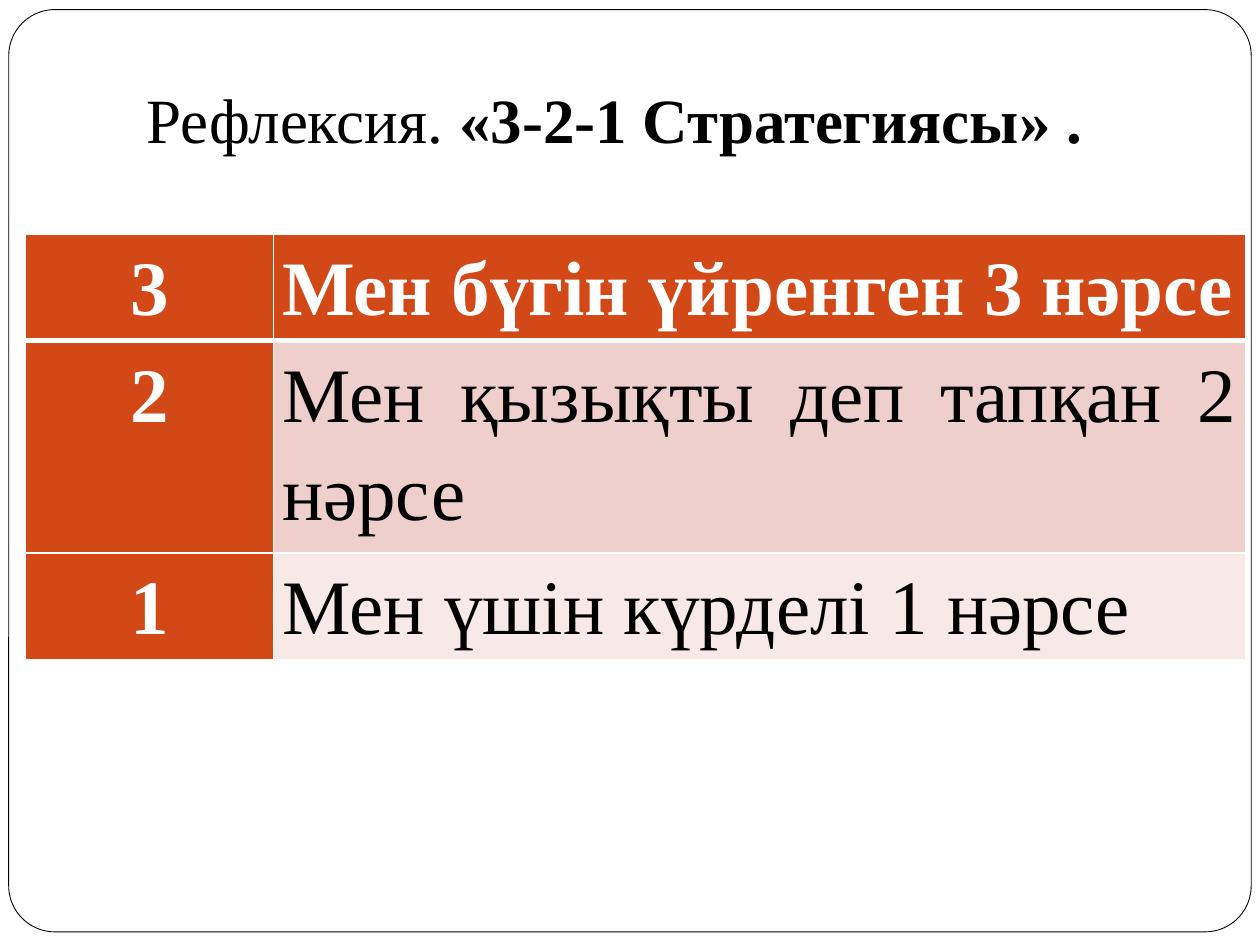
from dataclasses import dataclass

from lxml.etree import SubElement
from pptx import Presentation
from pptx.dml.color import RGBColor
from pptx.enum.shapes import MSO_SHAPE
from pptx.enum.text import MSO_ANCHOR, MSO_AUTO_SIZE, PP_ALIGN
from pptx.oxml.ns import qn
from pptx.util import Pt


@dataclass(frozen=True)
class Theme:
    font: str = "Times New Roman"
    title_size: int = 36
    table_size: int = 44
    black: str = "000000"
    white: str = "FFFFFF"
    accent: str = "D34817"
    bands: tuple = ("EFCFCC", "F7E9E8")


THEME = Theme()
STRATEGY = [
    ("3", "Мен бүгін үйренген 3 нәрсе"),
    ("2", "Мен қызықты деп тапқан 2 нәрсе"),
    ("1", "Мен үшін күрделі 1 нәрсе"),
]
COLUMN_WIDTHS = (141.8, 555.8)
ROW_HEIGHTS = (55.5, 112, 56)


def color(value):
    return RGBColor.from_string(value)


def format_span(span, size, ink, bold):
    span.font.name = THEME.font
    span.font.size = Pt(size)
    span.font.color.rgb = color(ink)
    span.font.bold = bold


def add_frame(page):
    """Rounded page border, placed behind everything else."""
    frame = page.shapes.add_shape(
        MSO_SHAPE.ROUNDED_RECTANGLE, Pt(5), Pt(5.5), Pt(710), Pt(527))
    frame.adjustments[0] = 0.05
    frame.shadow.inherit = False
    frame.fill.solid()
    frame.fill.fore_color.rgb = color(THEME.white)
    frame.line.color.rgb = color(THEME.black)
    frame.line.width = Pt(0.5)
    page.shapes.element.insert(2, frame.element)


def set_title(page, parts):
    title = page.shapes.title
    title.left, title.top, title.width, title.height = (
        Pt(76.5), Pt(41.8), Pt(554.4), Pt(51))
    text_frame = title.text_frame
    text_frame.word_wrap = False
    text_frame.auto_size = MSO_AUTO_SIZE.SHAPE_TO_FIT_TEXT
    text_frame.vertical_anchor = MSO_ANCHOR.MIDDLE
    para = text_frame.paragraphs[0]
    para.alignment = PP_ALIGN.LEFT
    for text, bold in parts:
        span = para.add_run()
        span.text = text
        format_span(span, THEME.title_size, THEME.black, bold)


def set_borders(cell, top, bottom):
    """White cell borders; line elements must precede the fill."""
    properties = cell._tc.get_or_add_tcPr()
    widths = {"a:lnL": 1, "a:lnR": 1, "a:lnT": top, "a:lnB": bottom}
    for position, (side, width) in enumerate(widths.items()):
        line = SubElement(properties, qn(side), w=str(Pt(width)))
        fill = SubElement(line, qn("a:solidFill"))
        SubElement(fill, qn("a:srgbClr"), val=THEME.white)
        properties.insert(position, line)


def fill_cell(cell, text, fill, header, alignment):
    cell.margin_left = cell.margin_right = Pt(5)
    cell.margin_top = cell.margin_bottom = 0
    cell.fill.solid()
    cell.fill.fore_color.rgb = color(fill)
    para = cell.text_frame.paragraphs[0]
    para.text = text
    para.alignment = alignment
    para.line_spacing = 1.15
    ink = THEME.white if header else THEME.black
    format_span(para.runs[0], THEME.table_size, ink, header)


def add_strategy_table(page):
    table = page.shapes.add_table(
        len(STRATEGY), len(COLUMN_WIDTHS), Pt(14.4), Pt(134),
        Pt(sum(COLUMN_WIDTHS)), Pt(sum(ROW_HEIGHTS))).table
    table.first_col = True
    for column, width in zip(table.columns, COLUMN_WIDTHS):
        column.width = Pt(width)
    for row, height in zip(table.rows, ROW_HEIGHTS):
        row.height = Pt(height)

    # First row and first column are headers; the rest is banded
    alignments = (PP_ALIGN.CENTER, PP_ALIGN.JUSTIFY)
    for row_index, texts in enumerate(STRATEGY):
        for column_index, text in enumerate(texts):
            cell = table.cell(row_index, column_index)
            header = row_index == 0 or column_index == 0
            fill = THEME.accent if header else THEME.bands[row_index - 1]
            fill_cell(cell, text, fill, header, alignments[column_index])
            set_borders(cell, top=3 if row_index == 1 else 1,
                        bottom=3 if row_index == 0 else 1)


def main():
    deck = Presentation()
    deck.slide_width, deck.slide_height = Pt(720), Pt(540)
    page = deck.slides.add_slide(deck.slide_layouts.get_by_name("Title Only"))
    add_frame(page)
    set_title(page, [("Рефлексия. ", False), ("«3-2-1 Стратегиясы» .", True)])
    add_strategy_table(page)
    deck.save("out.pptx")


if __name__ == "__main__":
    main()
